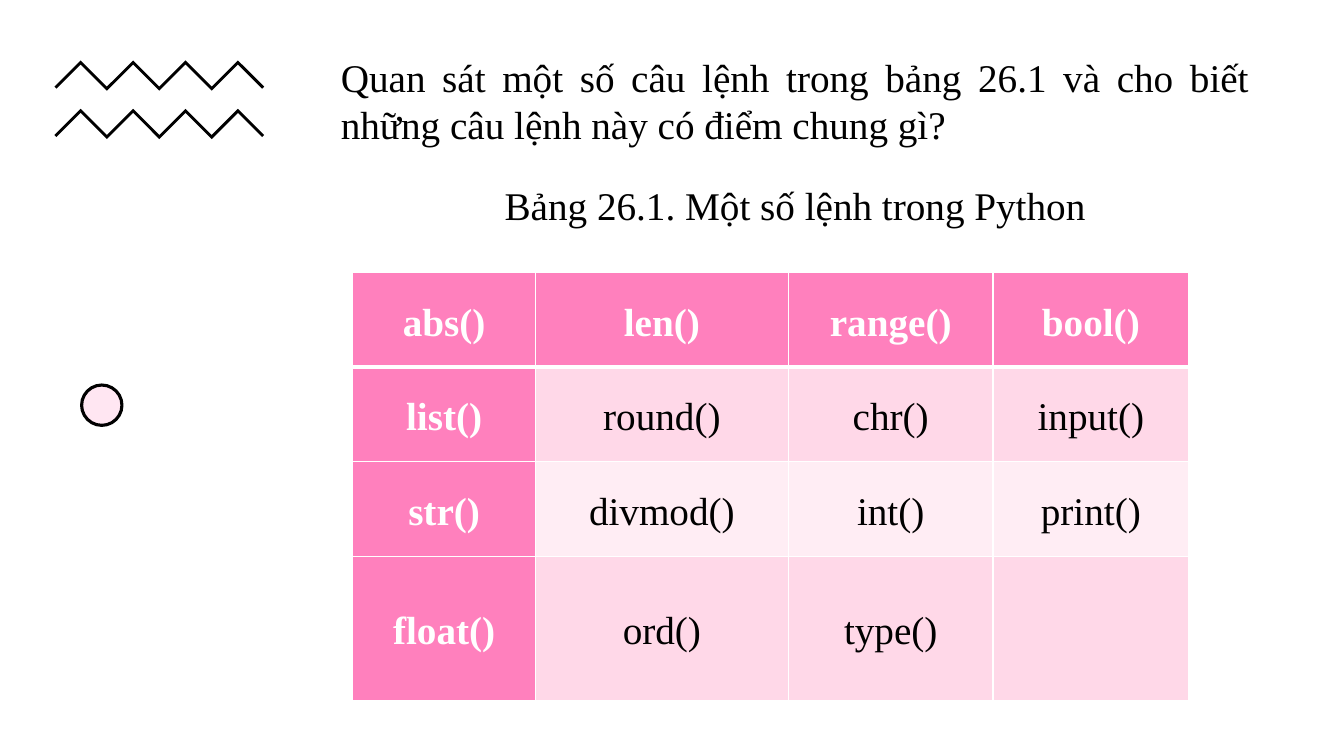
import pptx
import pptx.dml.color
import pptx.enum.shapes
import pptx.enum.text
import pptx.oxml
import pptx.oxml.ns
import pptx.util

PX = 9144
PINK, ROSE, BLUSH, PALE = "FF80BD", "FFD8E8", "FFEDF4", "FFE6F2"
BLACK, WHITE = "000000", "FFFFFF"
ALIGN = pptx.enum.text.PP_ALIGN
ANCHOR = pptx.enum.text.MSO_ANCHOR


def px(length):
    return pptx.util.Emu(length * PX)


def color(value):
    return pptx.dml.color.RGBColor.from_string(value)


def style(target, formats):
    for name, value in formats.items():
        setattr(target, name, value)


class Deck:
    font = {"name": "Times New Roman", "size": pptx.util.Pt(28)}
    cell_frame = {
        "vertical_anchor": ANCHOR.MIDDLE,
        "margin_left": px(7), "margin_right": px(7),
        "margin_top": 0, "margin_bottom": 0,
    }

    def __init__(self, width, height):
        self.presentation = pptx.Presentation()
        style(self.presentation, {"slide_width": px(width), "slide_height": px(height)})
        self.slide = self.presentation.slides.add_slide(self.presentation.slide_layouts[5])

    def fill(self, target, value):
        target.fill.solid()
        target.fill.fore_color.rgb = color(value)

    def put_text(self, paragraph, text, value, bold, **formats):
        style(paragraph, formats)
        run = paragraph.add_run()
        run.text = text
        style(run.font, {**self.font, "bold": bold})
        run.font.color.rgb = color(value)

    def title(self, left, top, width, height, lines):
        heading = self.slide.shapes.title
        style(heading, {"left": px(left), "top": px(top), "width": px(width), "height": px(height)})
        frame = heading.text_frame
        style(frame, {
            "word_wrap": True,
            "vertical_anchor": ANCHOR.TOP,
            "auto_size": pptx.enum.text.MSO_AUTO_SIZE.SHAPE_TO_FIT_TEXT,
        })
        gap = pptx.util.Pt(12)
        for index, (text, alignment) in enumerate(lines):
            paragraph = frame.add_paragraph() if index else frame.paragraphs[0]
            self.put_text(paragraph, text, BLACK, False,
                          alignment=alignment, space_before=gap, space_after=gap)

    def dot(self, left, top, size):
        circle = self.slide.shapes.add_shape(
            pptx.enum.shapes.MSO_SHAPE.OVAL, px(left), px(top), px(size), px(size))
        circle.shadow.inherit = False
        self.fill(circle, PALE)
        circle.line.color.rgb = color(BLACK)
        circle.line.width = pptx.util.Pt(2.25)

    def zigzag(self, left, top, step=26, thickness=4, folds=8):
        ridge = [(step * i, 0 if i % 2 else step) for i in range(folds + 1)]
        half = thickness // 2
        underside = [(x, y + thickness) for x, y in ridge[-2:0:-1]]
        right_end = (step * folds - half, step + half)
        left_end = (half, step + half)
        outline = [(left + x, top + y)
                   for x, y in ridge + [right_end] + underside + [left_end]]
        builder = self.slide.shapes.build_freeform(*outline[0], scale=PX)
        builder.add_line_segments(outline[1:], close=True)
        wave = builder.convert_to_shape()
        wave.shadow.inherit = False
        self.fill(wave, BLACK)
        wave.line.fill.background()

    def borders(self, cell, **points):
        properties = cell._tc.get_or_add_tcPr()
        for index, side in enumerate("LRTB"):
            width = pptx.util.Pt(points.get(side, 1))
            properties.insert(index, pptx.oxml.parse_xml(
                f'<a:ln{side} {pptx.oxml.ns.nsdecls("a")} w="{width}"><a:solidFill>'
                f'<a:srgbClr val="{WHITE}"/></a:solidFill></a:ln{side}>'))

    def table(self, left, top, widths, heights, rows):
        grid = self.slide.shapes.add_table(
            len(rows), len(widths), px(left), px(top),
            px(sum(widths)), px(sum(heights))).table
        grid.first_col = True
        for column, width in zip(grid.columns, widths):
            column.width = px(width)
        for r, (commands, height) in enumerate(zip(rows, heights)):
            grid.rows[r].height = px(height)
            for c, command in enumerate(commands):
                cell = grid.cell(r, c)
                header = r == 0 or c == 0
                style(cell, self.cell_frame)
                self.fill(cell, PINK if header else ROSE if r % 2 else BLUSH)
                self.borders(cell, T=3 if r == 1 else 1, B=3 if r == 0 else 1)
                if command:
                    self.put_text(cell.text_frame.paragraphs[0], command,
                                  WHITE if header else BLACK, header,
                                  alignment=ALIGN.CENTER, line_spacing=1.15)


def main():
    deck = Deck(1333, 750)
    deck.dot(81, 382, 40)
    for top in (60, 108):
        deck.zigzag(54, top)
    deck.title(328, 48, 921, 185, [
        ("Quan sát một số câu lệnh trong bảng 26.1 và cho biết "
         "những câu lệnh này có điểm chung gì?", ALIGN.JUSTIFY),
        ("Bảng 26.1. Một số lệnh trong Python", ALIGN.CENTER),
    ])
    deck.table(350, 270, [181, 251, 203, 194], [94, 94, 94, 143], [
        ["abs()", "len()", "range()", "bool()"],
        ["list()", "round()", "chr()", "input()"],
        ["str()", "divmod()", "int()", "print()"],
        ["float()", "ord()", "type()", ""],
    ])
    deck.presentation.save("out.pptx")


if __name__ == "__main__":
    main()
